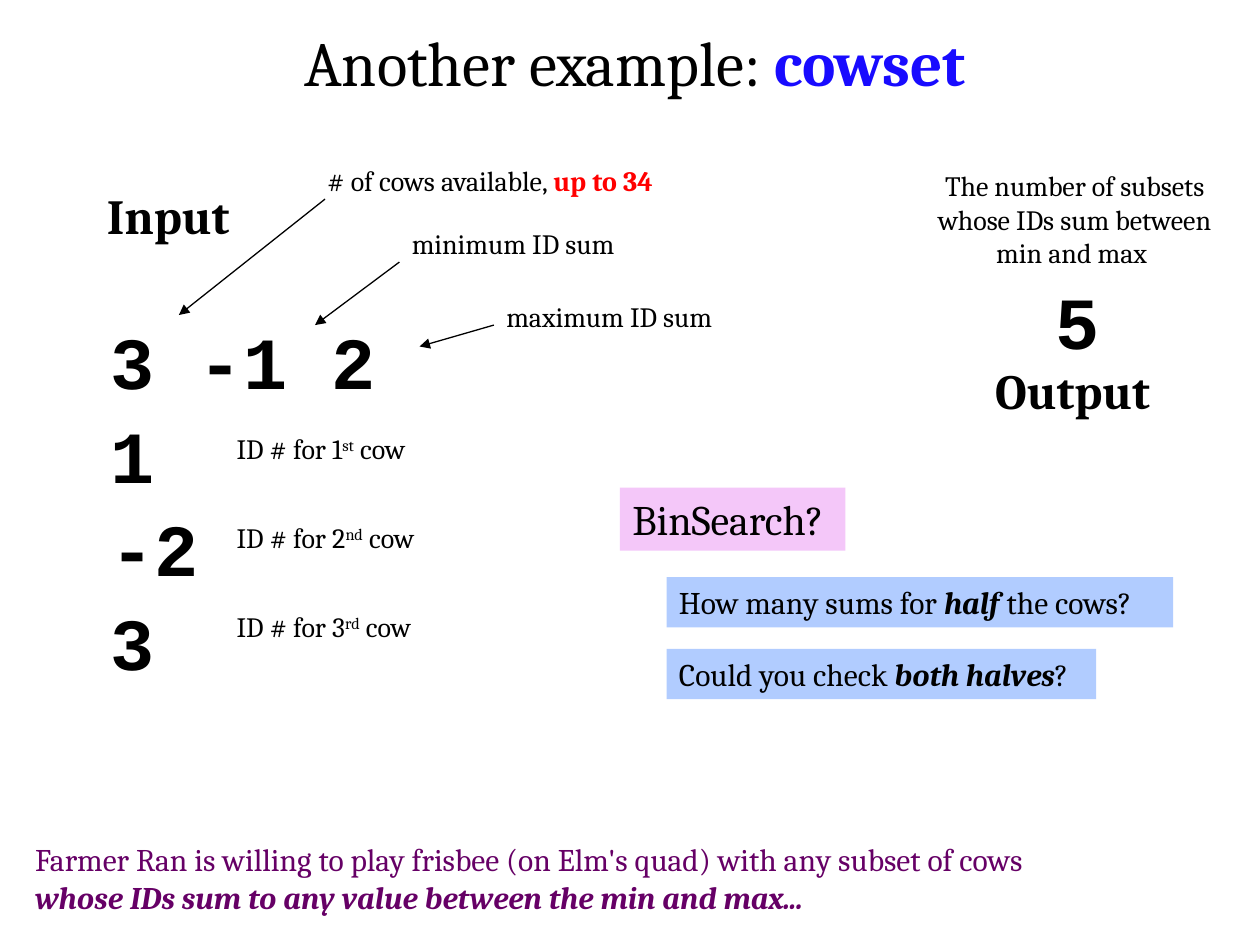
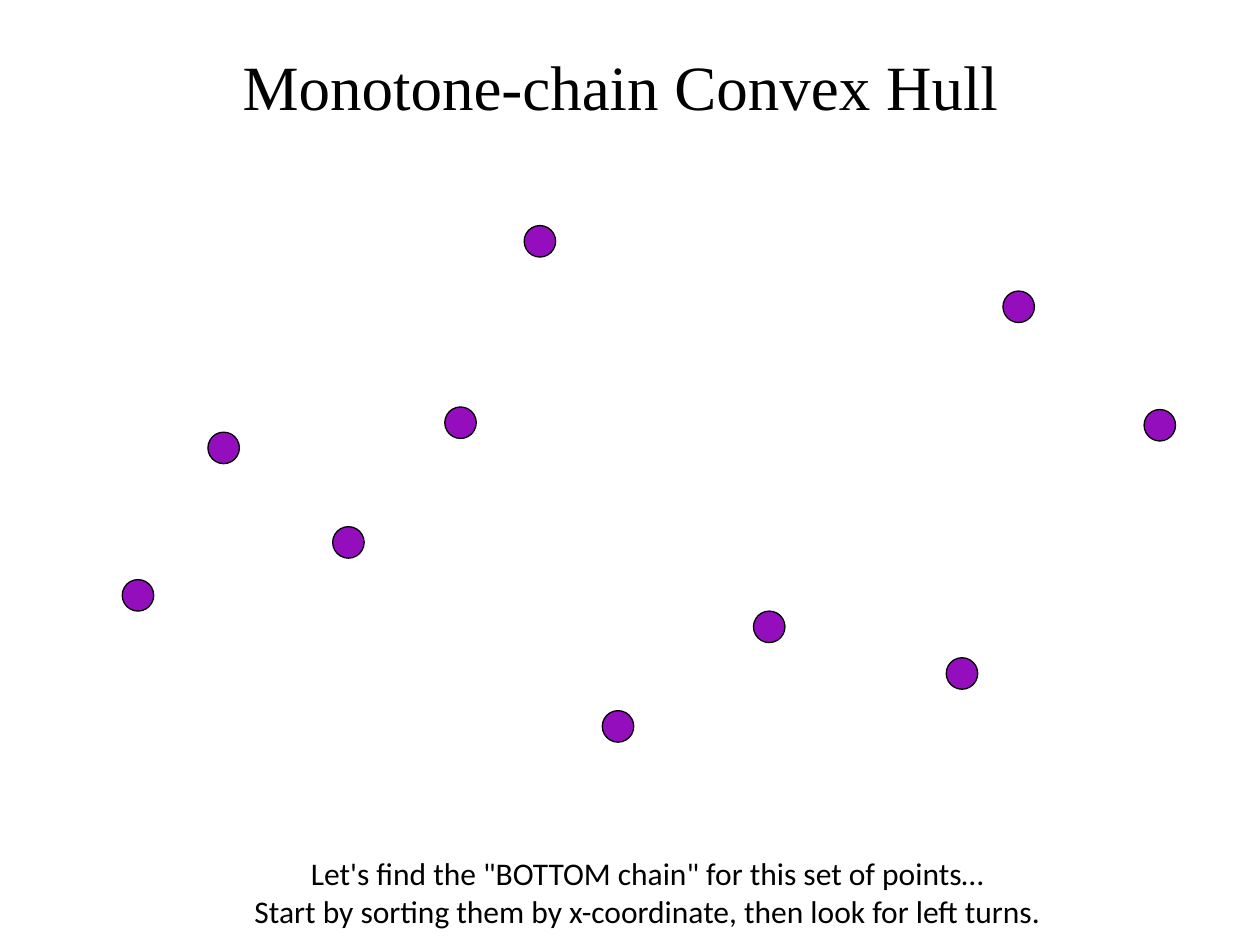
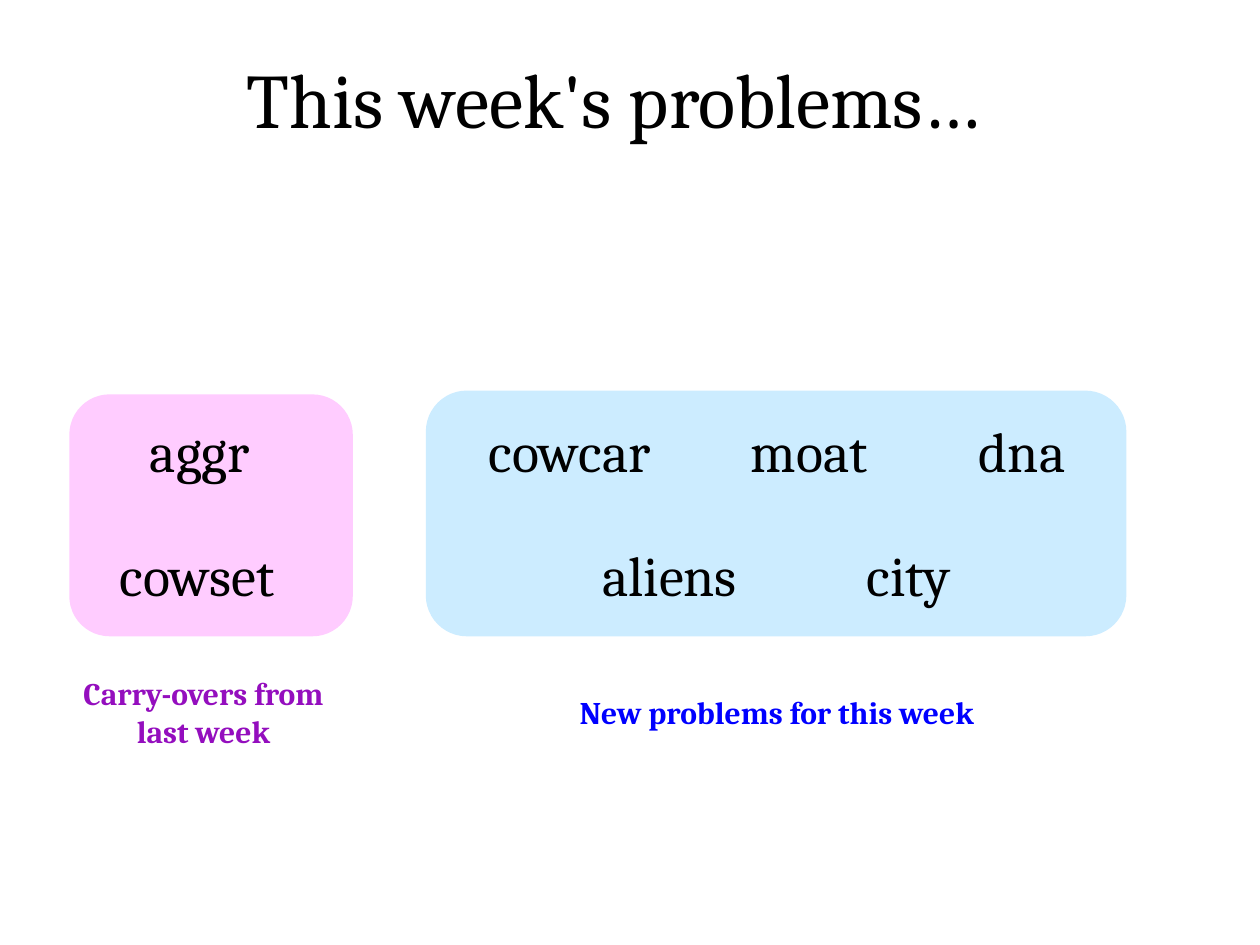
from dataclasses import dataclass, replace

from lxml.etree import SubElement
from pptx import Presentation
from pptx.dml.color import RGBColor
from pptx.enum.shapes import MSO_CONNECTOR, MSO_SHAPE
from pptx.enum.text import MSO_ANCHOR, MSO_AUTO_SIZE, PP_ALIGN
from pptx.oxml.ns import qn
from pptx.util import Inches, Pt

BLACK = "000000"
PURPLE = "940EBE"
PLUM = "660066"
PINK = "F4C7F9"
PALE_BLUE = "B1CCFF"
TITLE_ONLY = 5
DOT_SIZE = 0.25


@dataclass(frozen=True)
class Style:
    """Character formatting of one run."""
    size: float = 16
    font: str = "Cambria"
    color: str = BLACK
    bold: bool = False
    italic: bool = False
    raised: bool = False


LABEL = Style()
NOTE = Style(size=18)
STRONG_NOTE = replace(NOTE, bold=True, italic=True)
HEADING = Style(size=28, bold=True)
TITLE = Style(size=36)
DATA = Style(size=42, font="Courier New", bold=True)
PROBLEM = Style(size=32)


def rgb(value):
    """Turn a hex string into a colour."""
    return RGBColor.from_string(value)


def add_run(paragraph, text, style):
    """Append one formatted run."""
    run = paragraph.add_run()
    run.text = text
    font = run.font
    font.size, font.name = Pt(style.size), style.font
    font.bold, font.italic = style.bold, style.italic
    font.color.rgb = rgb(style.color)
    if style.raised:
        run._r.get_or_add_rPr().set("baseline", "30000")


def fill_text(shape, lines, align=PP_ALIGN.LEFT, wrap=False, before=0):
    """Write lines of (text, style) runs into a shape."""
    frame = shape.text_frame
    frame.word_wrap = wrap
    frame.auto_size = MSO_AUTO_SIZE.SHAPE_TO_FIT_TEXT
    frame.vertical_anchor = MSO_ANCHOR.TOP
    for index, runs in enumerate(lines):
        paragraph = frame.add_paragraph() if index else frame.paragraphs[0]
        paragraph.alignment = align
        paragraph.space_before = Pt(before)
        for text, style in runs:
            add_run(paragraph, text, style)


def add_text(slide, box, *lines, **layout):
    """Add a text box."""
    textbox = slide.shapes.add_textbox(*map(Inches, box))
    fill_text(textbox, lines, **layout)
    return textbox


def add_centered(slide, box, *lines, wrap=True):
    """Add a text box with centred lines."""
    add_text(slide, box, *lines, align=PP_ALIGN.CENTER, wrap=wrap)


def add_data(slide, box, *values):
    """Add lines of sample data."""
    data = add_text(slide, box, *[[(value, DATA)] for value in values], before=3)
    data.text_frame.margin_top = Inches(0.1)


def add_filled(slide, kind, box, fill, outline=None):
    """Add a preset shape with a flat fill."""
    shape = slide.shapes.add_shape(kind, *map(Inches, box))
    shape.shadow.inherit = False
    shape.fill.solid()
    shape.fill.fore_color.rgb = rgb(fill)
    if outline:
        shape.line.color.rgb = rgb(outline)
        shape.line.width = Pt(0.75)
    else:
        shape.line.fill.background()
    return shape


def add_hint(slide, box, fill, runs):
    """Add a coloured hint box."""
    fill_text(add_filled(slide, MSO_SHAPE.RECTANGLE, box, fill), [runs])


def add_arrow(slide, start, end):
    """Add a thin arrow that points at end."""
    arrow = slide.shapes.add_connector(
        MSO_CONNECTOR.STRAIGHT, *map(Inches, start + end))
    arrow.line.color.rgb = rgb(BLACK)
    arrow.line.width = Pt(0.75)
    SubElement(arrow.line._get_or_add_ln(), qn("a:tailEnd"), type="triangle")
    SubElement(arrow._element.spPr, qn("a:effectLst"))


def add_titled_slide(deck, box, *runs):
    """Add a slide with a centred title."""
    slide = deck.slides.add_slide(deck.slide_layouts[TITLE_ONLY])
    title = slide.shapes.title
    title.left, title.top, title.width, title.height = map(Inches, box)
    fill_text(title, [runs], align=PP_ALIGN.CENTER, wrap=True, before=4.5)
    return slide


def build_cowset(deck):
    """Explain the input and output of the cowset problem."""
    slide = add_titled_slide(
        deck, (1.79, 0.14, 6.5, 0.7), ("Another example: ", TITLE),
        ("cowset", replace(TITLE, color="180BFF", bold=True)))
    add_text(slide, (0.75, 1.42, 1.19, 0.57), [("Input", HEADING)])
    add_text(slide, (7.8, 2.81, 1.47, 0.57), [("Output", HEADING)])
    add_data(slide, (0.78, 2.41, 2.32, 2.93), "3 -1 2", "1", "-2", "3")
    add_data(slide, (8.28, 2.09, 0.56, 0.81), "5")

    add_text(slide, (2.5, 1.25, 2.95, 0.37), [
        ("# of cows available, ", LABEL),
        ("up to 34", replace(LABEL, color="FF0000", bold=True))])
    add_text(slide, (3.17, 1.75, 1.87, 0.37), [("minimum ID sum", LABEL)])
    add_text(slide, (3.92, 2.33, 1.9, 0.37), [("maximum ID sum", LABEL)])
    for start, end in [((2.58, 1.58), (1.42, 2.5)),
                       ((3.17, 2.08), (2.5, 2.58)),
                       ((3.92, 2.58), (3.33, 2.75))]:
        add_arrow(slide, start, end)

    for row, (ordinal, width) in enumerate(
            [("st", 1.67), ("nd", 1.72), ("rd", 1.69)]):
        add_text(slide, (1.78, 3.38 + 0.705 * row, width, 0.37), [
            (f"ID # for {row + 1}", LABEL),
            (ordinal, replace(LABEL, raised=True)), (" cow", LABEL)])

    add_centered(slide, (7.23, 1.29, 2.6, 0.91), [
        ("The number of subsets whose IDs sum between min and max ", LABEL)])
    add_hint(slide, (4.92, 3.87, 1.79, 0.5), PINK,
             [("BinSearch?", Style(size=24))])
    add_hint(slide, (5.29, 4.58, 4.02, 0.4), PALE_BLUE, [
        ("How many sums for ", NOTE), ("half ", STRONG_NOTE),
        ("the cows?", NOTE)])
    add_hint(slide, (5.29, 5.15, 3.41, 0.4), PALE_BLUE, [
        ("Could you check ", NOTE), ("both halves", STRONG_NOTE), ("?", NOTE)])
    add_text(slide, (0.18, 6.62, 8.1, 0.71), [
        ("Farmer Ran is willing to play frisbee (on Elm's quad) "
         "with any subset of cows ", replace(NOTE, color=PLUM)),
        ("whose IDs sum to any value between the min and max...",
         replace(STRONG_NOTE, color=PLUM))], wrap=True)


def build_hull(deck):
    """Show the points of the convex hull example."""
    slide = add_titled_slide(
        deck, (0.67, 0.33, 8.51, 0.71),
        ("Monotone-chain Convex Hull", replace(TITLE, font="Times New Roman")))
    for left, top in [(0.97, 4.6), (1.65, 3.43), (2.64, 4.18), (3.53, 3.23),
                      (4.78, 5.64), (5.98, 4.85), (7.96, 2.31), (7.51, 5.22),
                      (9.08, 3.25), (4.16, 1.79)]:
        add_filled(slide, MSO_SHAPE.OVAL, (left, top, DOT_SIZE, DOT_SIZE),
                   PURPLE, BLACK)
    task = replace(NOTE, font="Calibri")
    add_centered(
        slide, (1.91, 6.73, 6.46, 0.71),
        [('Let\'s find the "BOTTOM chain" for this set of points…', task)],
        [("Start by sorting them by x-coordinate, then look for left turns.",
          task)], wrap=False)


def build_problems(deck):
    """List old and new problems of the week."""
    slide = add_titled_slide(deck, (0.62, 0.36, 8.51, 0.83),
                             ("This week's problems…", Style(size=44)))
    for box, fill in [((0.55, 3.13, 2.25, 1.92), "FFCCFF"),
                      ((3.38, 3.1, 5.56, 1.95), "CCECFF")]:
        add_filled(slide, MSO_SHAPE.ROUNDED_RECTANGLE, box, fill)
    rows = {
        3.26: [("aggr", 1.09, 1.05), ("cowcar", 3.78, 1.58),
               ("moat", 5.86, 1.19), ("dna", 7.67, 0.92)],
        4.24: [("cowset", 0.85, 1.54), ("aliens", 4.68, 1.33),
               ("city", 6.78, 0.9)],
    }
    for top, problems in rows.items():
        for name, left, width in problems:
            add_text(slide, (left, top, width, 0.64), [(name, PROBLEM)])
    for box, caption, color in [
            ((0.5, 5.3, 2.23, 0.71), "Carry-overs from last week", PURPLE),
            ((3.76, 5.45, 4.81, 0.4), "New problems for this week", "0000FF")]:
        add_centered(slide, box,
                     [(caption, replace(NOTE, color=color, bold=True))])


def main():
    """Build and save the deck."""
    deck = Presentation()
    deck.slide_width, deck.slide_height = Inches(10), Inches(7.5)
    build_cowset(deck)
    build_hull(deck)
    build_problems(deck)
    deck.save("out.pptx")


if __name__ == "__main__":
    main()
